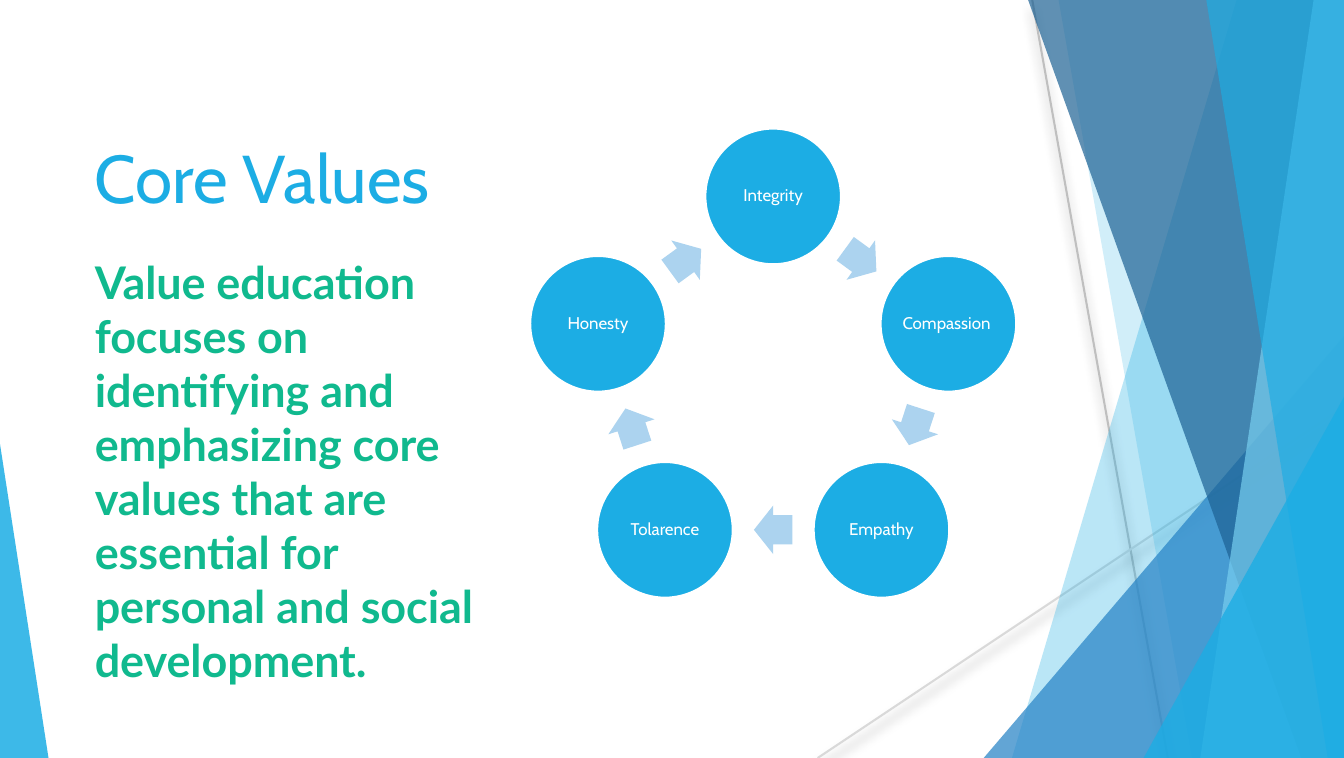
"""Build the Core Values slide: a five-step cycle beside an explanatory text."""
from math import cos, pi, radians, sin

from lxml import etree
from pptx import Presentation
from pptx.dml.color import RGBColor
from pptx.enum.shapes import MSO_CONNECTOR, MSO_SHAPE
from pptx.enum.text import MSO_ANCHOR, PP_ALIGN
from pptx.oxml import parse_xml
from pptx.oxml.ns import qn
from pptx.util import Inches, Pt

WIDTH, HEIGHT = 6.64, 269.5 / 72
BLUE = RGBColor(0x1C, 0xAD, 0xE4)
MID_BLUE = RGBColor(0x26, 0x83, 0xC6)
DARK_BLUE = RGBColor(0x1D, 0x62, 0x94)
SKY = RGBColor(0x77, 0xCE, 0xEF)
PALE_BLUE = RGBColor(0xAC, 0xD3, 0xEF)
GREEN = RGBColor(0x10, 0xB9, 0x8E)
WHITE = RGBColor(0xFF, 0xFF, 0xFF)
GRAY = RGBColor(0xBF, 0xBF, 0xBF)
LIGHT_GRAY = RGBColor(0xD9, 0xD9, 0xD9)
TRIANGLE, ELLIPSE, ARROW = MSO_SHAPE.ISOSCELES_TRIANGLE, MSO_SHAPE.OVAL, MSO_SHAPE.RIGHT_ARROW
STRAIGHT = MSO_CONNECTOR.STRAIGHT
LEFT, CENTER = PP_ALIGN.LEFT, PP_ALIGN.CENTER
TOP, MIDDLE, BOTTOM = MSO_ANCHOR.TOP, MSO_ANCHOR.MIDDLE, MSO_ANCHOR.BOTTOM

TITLE = "Core Values"
BODY = ("Value education focuses on identifying and emphasizing core values "
        "that are essential for personal and social development.")
VALUES = ["Integrity", "Compassion ", "Empathy", "Tolarence", "Honesty"]

RAYS = [((5.1, 0), (5.77, HEIGHT), GRAY), ((WIDTH, 2.01), (4.04, HEIGHT), LIGHT_GRAY)]
RIGHT_EDGE = [(WIDTH, 0), (WIDTH, HEIGHT)]
FACETS = [
    ("band", [(6.11, 0), *RIGHT_EDGE, (5, HEIGHT)], BLUE, 30),
    ("band", [(5.23, 0), *RIGHT_EDGE, (5.89, HEIGHT)], BLUE, 20),
    ("triangle", (4.86, 1.66, 1.78, 1), MID_BLUE, 72),
    ("band", [(5.08, 0), *RIGHT_EDGE, (6.43, HEIGHT)], DARK_BLUE, 70),
    ("band", [(6.49, 0), *RIGHT_EDGE, (5.93, HEIGHT)], SKY, 70),
    ("band", [(5.96, 0), *RIGHT_EDGE, (6.56, HEIGHT)], BLUE, 65),
    ("triangle", (5.65, 1.96, 0.99, 1), BLUE, 80),
    ("triangle", (0, 2.19, 0.24, 0), BLUE, 85),
]

RING_X, RING_Y, RING_RADIUS = 3.82, 1.88, 0.91
CIRCLE = 0.72
ARROW_WIDTH, ARROW_HEIGHT = 0.19, 0.24
SHADOW = ('<a:effectLst xmlns:a="http://schemas.openxmlformats.org/drawingml/2006/main">'
          '<a:outerShdw blurRad="50800" dist="38100" dir="5400000" rotWithShape="0">'
          '<a:srgbClr val="000000"><a:alpha val="35000"/></a:srgbClr>'
          '</a:outerShdw></a:effectLst>')


def paint(shape, color, opacity=100):
    """Give a shape a flat fill without line or shadow."""
    shape.shadow.inherit = False
    shape.fill.solid()
    shape.fill.fore_color.rgb = color
    shape.line.fill.background()
    if opacity < 100:
        color_element = shape._element.spPr.find(qn("a:solidFill"))[0]
        etree.SubElement(color_element, qn("a:alpha")).set("val", str(opacity * 1000))


def write(shape, text, *, size, color, font="Cabin", bold=False, align=LEFT,
          anchor=TOP, inset=None, line_spacing=None, space_before=None):
    """Put one formatted paragraph into a shape."""
    frame = shape.text_frame
    frame.word_wrap = True
    frame.vertical_anchor = anchor
    if inset is not None:
        frame.margin_left = frame.margin_right = Inches(inset)
        frame.margin_top = frame.margin_bottom = Inches(inset)
    paragraph = frame.paragraphs[0]
    paragraph.alignment = align
    paragraph.line_spacing = line_spacing
    paragraph.space_before = space_before
    run = paragraph.add_run()
    run.text = text
    run.font.name = font
    run.font.size = Pt(size)
    run.font.bold = bold
    run.font.color.rgb = color


def add_ray(shapes, start, end, color):
    """Draw a thin line with a soft shadow."""
    ray = shapes.add_connector(STRAIGHT, *map(Inches, start + end))
    ray.line.color.rgb = color
    ray.line.width = Pt(0.75)
    ray._element.spPr.append(parse_xml(SHADOW))


def add_facet(shapes, kind, geometry, color, opacity):
    """Draw one translucent facet that reaches the bottom of the slide."""
    if kind == "band":
        points = [(Inches(x), Inches(y)) for x, y in geometry]
        builder = shapes.build_freeform(*points[0])
        builder.add_line_segments(points[1:], close=True)
        facet = builder.convert_to_shape()
    else:
        left, top, width, apex = geometry
        facet = shapes.add_shape(TRIANGLE, *map(Inches, (left, top, width, HEIGHT - top)))
        facet.adjustments[0] = apex
    paint(facet, color, opacity)


def add_on_ring(shapes, kind, angle, radius, width, height):
    """Centre a shape on the ring, with the angle clockwise from the top."""
    left = RING_X + radius * sin(radians(angle)) - width / 2
    top = RING_Y - radius * cos(radians(angle)) - height / 2
    return shapes.add_shape(kind, *map(Inches, (left, top, width, height)))


def add_cycle(shapes):
    """Draw the circles and the arrows halfway between them."""
    step = 360 / len(VALUES)
    arrow_radius = RING_RADIUS * cos(pi / len(VALUES))
    for index, value in enumerate(VALUES):
        angle = index * step
        circle = add_on_ring(shapes, ELLIPSE, angle, RING_RADIUS, CIRCLE, CIRCLE)
        paint(circle, BLUE)
        circle.line.color.rgb = WHITE
        circle.line.width = Pt(4.33)
        write(circle, value, size=6, color=WHITE, align=CENTER, anchor=MIDDLE,
              inset=0.01, line_spacing=0.9)
        arrow = add_on_ring(shapes, ARROW, angle + step / 2, arrow_radius,
                            ARROW_WIDTH, ARROW_HEIGHT)
        arrow.rotation = angle + step / 2
        arrow.adjustments[0], arrow.adjustments[1] = 0.6, 0.5
        paint(arrow, PALE_BLUE)


def main():
    """Assemble and save the slide."""
    presentation = Presentation()
    presentation.slide_width, presentation.slide_height = Inches(WIDTH), Inches(HEIGHT)
    shapes = presentation.slides.add_slide(presentation.slide_layouts[6]).shapes
    for ray in RAYS:
        add_ray(shapes, *ray)
    for facet in FACETS:
        add_facet(shapes, *facet)
    title = shapes.add_textbox(*map(Inches, (0.37, 0.54, 2.1, 0.58)))
    write(title, TITLE, size=24, color=BLUE, anchor=BOTTOM)
    add_cycle(shapes)
    body = shapes.add_textbox(*map(Inches, (0.37, 1.21, 2.28, 2.09)))
    write(body, BODY, size=16, color=GREEN, font="Lato", bold=True, space_before=Pt(5))
    presentation.save("out.pptx")


if __name__ == "__main__":
    main()
